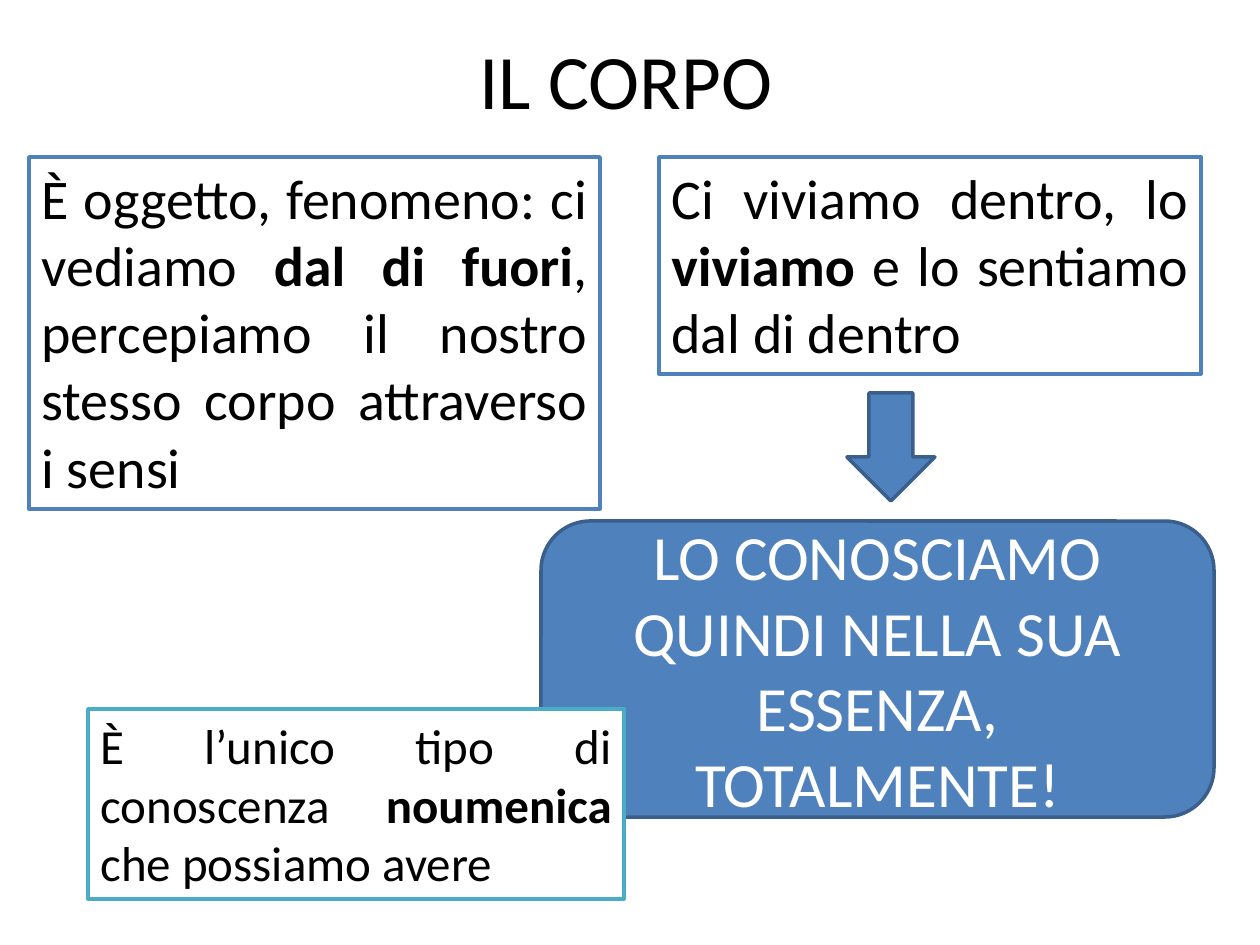
from pptx import Presentation
from pptx.dml.color import RGBColor
from pptx.enum.shapes import MSO_SHAPE
from pptx.enum.text import MSO_ANCHOR, MSO_AUTO_SIZE, PP_ALIGN
from pptx.util import Emu, Pt

PX_PER_INCH = 126
BLUE, DARK_BLUE, TEAL = "4F81BD", "3A5F8C", "4BACC6"
BLACK, WHITE = "000000", "FFFFFF"


def px(length):
    return Emu(round(length * 914400 / PX_PER_INCH))


def color(value):
    return RGBColor.from_string(value)


def write_text(shape, *runs, size, ink=BLACK, align=PP_ALIGN.CENTER,
               anchor=MSO_ANCHOR.MIDDLE, auto_size=MSO_AUTO_SIZE.NONE):
    """Write one paragraph; every second run is bold."""
    frame = shape.text_frame
    frame.word_wrap = True
    frame.auto_size = auto_size
    frame.vertical_anchor = anchor
    paragraph = frame.paragraphs[0]
    paragraph.alignment = align
    for index, text in enumerate(runs):
        run = paragraph.add_run()
        run.text = text
        run.font.name = "Calibri"
        run.font.size = Pt(size)
        run.font.bold = index % 2 == 1
        run.font.color.rgb = color(ink)


def add_figure(slide, kind, box, fill=BLUE, line=DARK_BLUE):
    shape = slide.shapes.add_shape(kind, *map(px, box))
    shape.shadow.inherit = False
    shape.fill.solid()
    shape.fill.fore_color.rgb = color(fill)
    shape.line.color.rgb = color(line)
    shape.line.width = Pt(2)
    return shape


def add_note(slide, box, *runs, size=32, line=BLUE):
    """Add a white framed box with justified text."""
    shape = add_figure(slide, MSO_SHAPE.RECTANGLE, box, fill=WHITE, line=line)
    write_text(shape, *runs, size=size, align=PP_ALIGN.JUSTIFY,
               anchor=MSO_ANCHOR.TOP, auto_size=MSO_AUTO_SIZE.SHAPE_TO_FIT_TEXT)


def main():
    presentation = Presentation()
    presentation.slide_width, presentation.slide_height = px(1260), px(945)
    slide = presentation.slides.add_slide(presentation.slide_layouts[6])

    # Title
    title = slide.shapes.add_textbox(*map(px, (59, 0, 1134, 158)))
    write_text(title, "IL CORPO", size=44)

    # Two views of the body
    add_note(slide, (29, 157, 571, 352), "È oggetto, fenomeno: ci vediamo ",
             "dal di fuori",
             ", percepiamo il nostro stesso corpo attraverso i sensi")
    add_note(slide, (659, 157, 542, 217), "Ci viviamo dentro, lo ",
             "viviamo", " e lo sentiamo dal di dentro")

    # Conclusion, partly covered by its comment
    conclusion = add_figure(slide, MSO_SHAPE.ROUNDED_RECTANGLE,
                            (541, 521, 673, 296))
    write_text(conclusion,
               "LO CONOSCIAMO QUINDI NELLA SUA ESSENZA, TOTALMENTE!",
               size=36, ink=WHITE)
    add_note(slide, (88, 709, 536, 190), "È l’unico tipo di conoscenza ",
             "noumenica", " che possiamo avere", size=28, line=TEAL)

    # Arrow from the inner view to the conclusion
    add_figure(slide, MSO_SHAPE.DOWN_ARROW, (847, 393, 88, 108))

    presentation.save("out.pptx")


if __name__ == "__main__":
    main()
